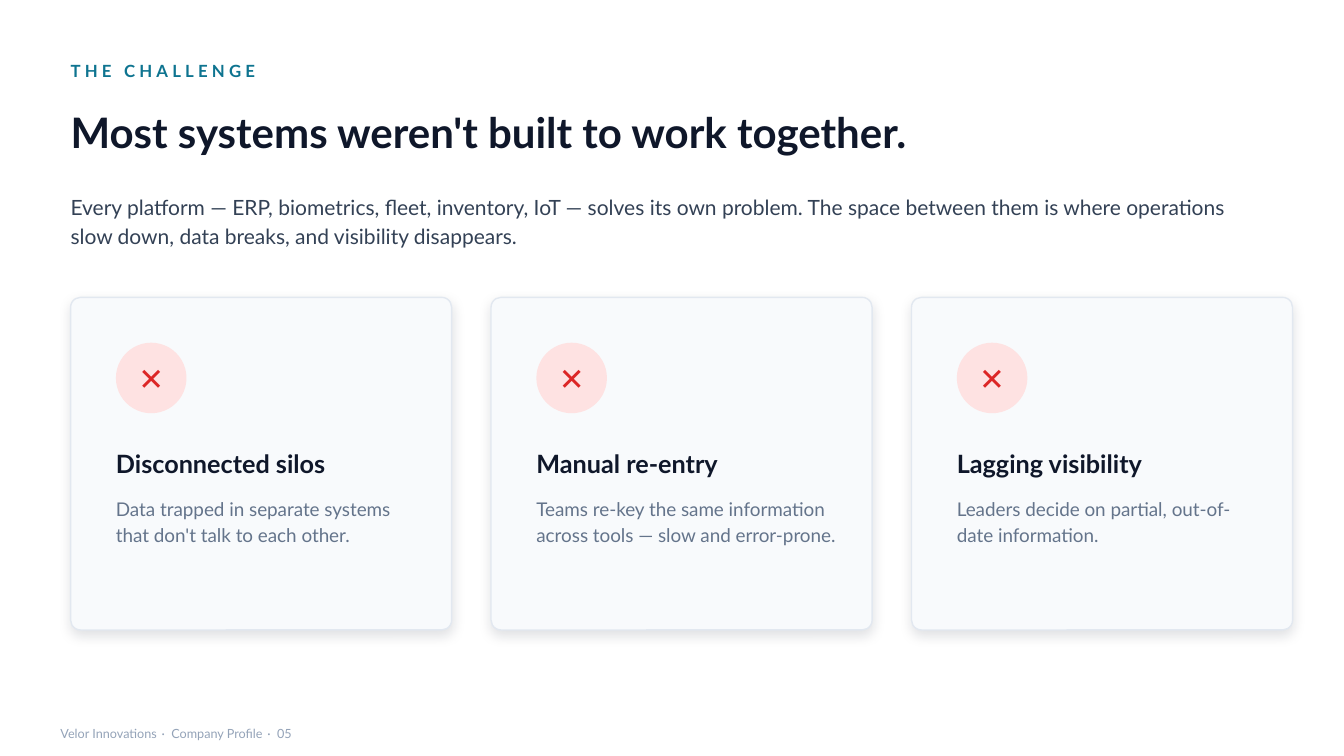
"""Build the challenge slide: a headline, a lead and three problem cards."""
from pptx import Presentation
from pptx.dml.color import RGBColor
from pptx.enum.shapes import MSO_SHAPE
from pptx.enum.text import MSO_ANCHOR, MSO_AUTO_SIZE, PP_ALIGN
from pptx.oxml import parse_xml
from pptx.oxml.ns import nsdecls, qn
from pptx.util import Emu, Pt

EMU_PER_PX = 9144
TITLE_ONLY = 5

INK = RGBColor(0x0F, 0x17, 0x2A)
TEAL = RGBColor(0x0E, 0x74, 0x90)
SLATE = RGBColor(0x33, 0x41, 0x55)
MUTED = RGBColor(0x64, 0x74, 0x8B)
FAINT = RGBColor(0x94, 0xA3, 0xB8)
CARD = RGBColor(0xF8, 0xFA, 0xFC)
BORDER = RGBColor(0xE2, 0xE8, 0xF0)
RED = RGBColor(0xDC, 0x26, 0x26)
ROSE = RGBColor(0xFE, 0xE2, 0xE2)

MARGIN = 70
CARD_TOP, CARD_WIDTH, CARD_HEIGHT, CARD_GAP = 295, 378, 330, 39
CARD_PADDING, ICON_SIZE = 45, 70

PROBLEMS = [
    ("Disconnected silos", "Data trapped in separate systems that don't talk to each other."),
    ("Manual re-entry", "Teams re-key the same information across tools — slow and error-prone."),
    ("Lagging visibility", "Leaders decide on partial, out-of-date information."),
]
FOOTER = ["Velor Innovations", "Company Profile", "05"]


def px(length):
    return Emu(length * EMU_PER_PX)


class SlideBuilder:
    """Draw styled elements on the current slide."""

    font_name = "Lato"

    def __init__(self, presentation):
        self.slide = presentation.slides.add_slide(presentation.slide_layouts[TITLE_ONLY])

    def style_run(self, run, size, color, bold=False, spacing=0):
        run.font.name = self.font_name
        run.font.size = Pt(size)
        run.font.color.rgb = color
        run.font.bold = bold
        if spacing:
            run._r.get_or_add_rPr().set("spc", str(round(spacing * 100)))

    def fill_text(self, shape, text, size, color, bold=False, spacing=0, line_spacing=None,
                  anchor=MSO_ANCHOR.MIDDLE, align=PP_ALIGN.LEFT):
        frame = shape.text_frame
        frame.text = text
        frame.word_wrap = True
        frame.auto_size = MSO_AUTO_SIZE.NONE
        frame.vertical_anchor = anchor
        frame.margin_left = frame.margin_top = frame.margin_right = frame.margin_bottom = 0
        paragraph = frame.paragraphs[0]
        paragraph.alignment = align
        if line_spacing:
            paragraph.line_spacing = line_spacing
        for run in paragraph.runs:
            self.style_run(run, size, color, bold, spacing)
        return paragraph

    def title(self, left, top, width, height, text, size, color):
        shape = self.slide.shapes.title
        shape.left, shape.top, shape.width, shape.height = map(px, (left, top, width, height))
        self.fill_text(shape, text, size, color, bold=True)

    def text(self, left, top, width, height, text, size, color, **style):
        box = self.slide.shapes.add_textbox(*map(px, (left, top, width, height)))
        return self.fill_text(box, text, size, color, **style)

    def shape(self, kind, left, top, width, height, fill):
        shape = self.slide.shapes.add_shape(kind, *map(px, (left, top, width, height)))
        shape.shadow.inherit = False
        shape.fill.solid()
        shape.fill.fore_color.rgb = fill
        shape.line.fill.background()
        return shape

    def panel(self, left, top, width, height):
        panel = self.shape(MSO_SHAPE.ROUNDED_RECTANGLE, left, top, width, height, CARD)
        panel.adjustments[0] = 0.03
        panel.line.color.rgb = BORDER
        panel.line.width = Pt(1)
        panel.element.spPr.find(qn("a:effectLst")).append(parse_xml(
            f'<a:outerShdw {nsdecls("a")} blurRad="{Pt(9)}" dist="{Pt(3)}" dir="5400000" '
            f'algn="bl" rotWithShape="0"><a:srgbClr val="{INK}"><a:alpha val="12000"/>'
            '</a:srgbClr></a:outerShdw>'))

    def icon(self, left, top, size):
        circle = self.shape(MSO_SHAPE.OVAL, left, top, size, size, ROSE)
        self.fill_text(circle, "✕", 22, RED, bold=True, align=PP_ALIGN.CENTER)

    def card(self, left, heading, detail):
        self.panel(left, CARD_TOP, CARD_WIDTH, CARD_HEIGHT)
        inner = left + CARD_PADDING
        self.icon(inner, CARD_TOP + CARD_PADDING, ICON_SIZE)
        self.text(inner, CARD_TOP + 140, 288, 50, heading, 18, INK, bold=True)
        self.text(inner, CARD_TOP + 195, 298, 110, detail, 13.5, MUTED,
                  line_spacing=1.15, anchor=MSO_ANCHOR.TOP)

    def footer(self, left, top, width, height, parts, size, color):
        paragraph = self.text(left, top, width, height, parts[0], size, color)
        for part in parts[1:]:
            for text, spacing in ((" · ", 1.15), (part, 0)):
                run = paragraph.add_run()
                run.text = text
                self.style_run(run, size, color, spacing=spacing)


def main():
    presentation = Presentation()
    presentation.slide_width, presentation.slide_height = px(1333), px(750)
    builder = SlideBuilder(presentation)
    builder.text(MARGIN, 55, 1200, 30, "THE CHALLENGE", 12, TEAL, bold=True, spacing=3)
    builder.title(MARGIN, 86, 1200, 90, "Most systems weren't built to work together.", 30, INK)
    builder.text(MARGIN, 175, 1150, 85,
                 "Every platform — ERP, biometrics, fleet, inventory, IoT — solves its own problem. "
                 "The space between them is where operations slow down, data breaks, "
                 "and visibility disappears.", 15, SLATE, line_spacing=1.18)
    for index, (heading, detail) in enumerate(PROBLEMS):
        builder.card(MARGIN + index * (CARD_WIDTH + CARD_GAP), heading, detail)
    builder.footer(60, 713, 900, 30, FOOTER, 9, FAINT)
    presentation.save("out.pptx")


if __name__ == "__main__":
    main()
